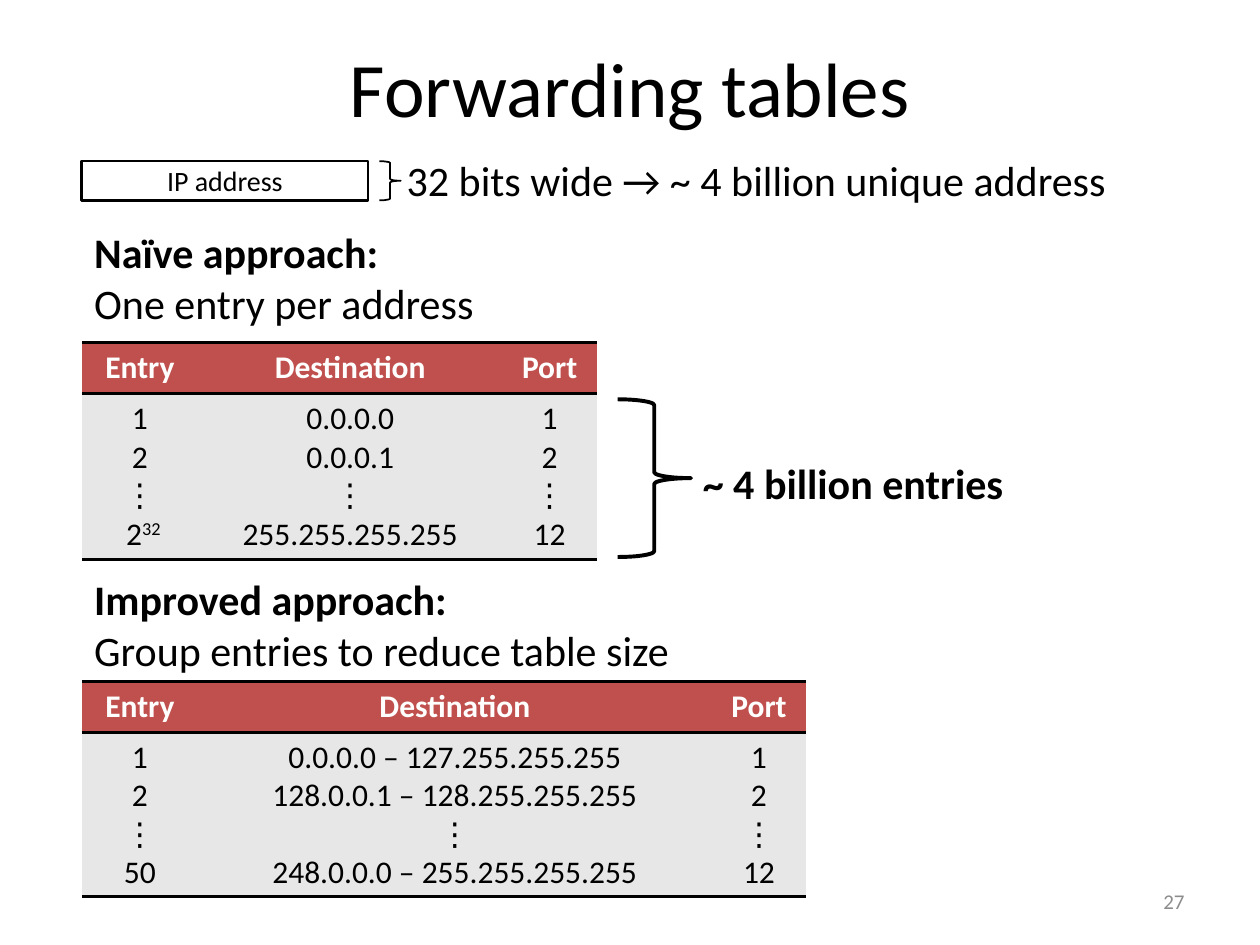
import pptx
import pptx.util
import pptx.dml.color
import pptx.enum.shapes
import pptx.enum.text
import pptx.oxml
import pptx.oxml.ns

Cm, Pt = pptx.util.Cm, pptx.util.Pt
Shape = pptx.enum.shapes.MSO_SHAPE
Align = pptx.enum.text.PP_ALIGN
Anchor = pptx.enum.text.MSO_ANCHOR
Fit = pptx.enum.text.MSO_AUTO_SIZE

BLACK, WHITE, RED = "000000", "FFFFFF", "C0504D"
PALE, GREY = "E7E7E7", "8C8C8C"
LEFT = 1.65
HEADS = ["Entry", "Destination", "Port"]


def tint(code):
    return pptx.dml.color.RGBColor.from_string(code)


def apply(item, values):
    for name, value in values.items():
        setattr(item, name, value)


class Deck:
    font = "Calibri"

    def __init__(self):
        self.file = pptx.Presentation()
        apply(self.file, {"slide_width": Cm(25.4), "slide_height": Cm(19.05)})
        self.slide = self.file.slides.add_slide(self.file.slide_layouts[5])

    def place(self, item, box):
        names = ("left", "top", "width", "height")
        apply(item, dict(zip(names, map(Cm, box))))

    def fill(self, frame, lines, size, bold=(), color=BLACK, align=Align.LEFT):
        for row, line in enumerate(lines):
            para = frame.paragraphs[0] if row == 0 else frame.add_paragraph()
            para.alignment = align
            for part, words in enumerate(line.split("^")):
                run = para.add_run()
                run.text = words
                apply(run.font, {"name": self.font, "size": Pt(size), "bold": row in bold})
                run.font.color.rgb = tint(color)
                if part:
                    run._r.get_or_add_rPr().set("baseline", "30000")

    def title(self, words, box):
        item = self.slide.shapes.title
        self.place(item, box)
        item.text_frame.vertical_anchor = Anchor.MIDDLE
        self.fill(item.text_frame, [words], 44, align=Align.CENTER)

    def text(self, lines, box, size=24, wrap=False, fit=Fit.SHAPE_TO_FIT_TEXT,
             anchor=Anchor.TOP, **style):
        frame = self.slide.shapes.add_textbox(*map(Cm, box)).text_frame
        apply(frame, {"word_wrap": wrap, "auto_size": fit, "vertical_anchor": anchor})
        self.fill(frame, lines, size, **style)

    def shape(self, kind, box, width):
        item = self.slide.shapes.add_shape(kind, *map(Cm, box))
        item.shadow.inherit = False
        item.fill.background()
        item.line.color.rgb = tint(BLACK)
        item.line.width = Pt(width)
        return item

    def label(self, words, box):
        frame = self.shape(Shape.RECTANGLE, box, 1.5).text_frame
        apply(frame, {"margin_left": 0, "margin_right": 0, "vertical_anchor": Anchor.MIDDLE})
        self.fill(frame, [words], 16, align=Align.CENTER)

    def brace(self, box, width):
        self.shape(Shape.RIGHT_BRACE, box, width).adjustments[0] = 0.08

    def edge(self, cell):
        space = pptx.oxml.ns.nsdecls("a")
        none = "<a:noFill/>"
        solid = f'<a:solidFill><a:srgbClr val="{BLACK}"/></a:solidFill>'
        sides = {"lnL": none, "lnR": none, "lnT": solid, "lnB": solid}
        for spot, (side, paint) in enumerate(sides.items()):
            line = f'<a:{side} {space} w="{int(Pt(2))}">{paint}</a:{side}>'
            cell._tc.get_or_add_tcPr().insert(spot, pptx.oxml.parse_xml(line))

    def table(self, top, widths, body):
        highs = [1.02, 3.3]
        box = (LEFT, top, sum(widths), sum(highs))
        grid = self.slide.shapes.add_table(2, len(widths), *map(Cm, box)).table
        grid.horz_banding = False
        for row, high in zip(grid.rows, highs):
            row.height = Cm(high)
        for col, width in enumerate(widths):
            grid.columns[col].width = Cm(width)
            self.cell(grid.cell(0, col), [HEADS[col]], RED, bold=[0], color=WHITE)
            self.cell(grid.cell(1, col), body[col], PALE)

    def cell(self, cell, lines, back, **style):
        cell.fill.solid()
        cell.fill.fore_color.rgb = tint(back)
        self.edge(cell)
        self.fill(cell.text_frame, lines, 18, align=Align.CENTER, **style)


def main():
    deck = Deck()
    deck.title("Forwarding tables", (1.27, 0.15, 22.86, 3.18))
    ports = ["1", "2", "⋮", "12"]
    deck.table(6.9, [2.34, 6.14, 1.9], [
        ["1", "2", "⋮", " 2^32"],
        ["0.0.0.0", "0.0.0.1", "⋮", "255.255.255.255"],
        ports])
    deck.brace((12.45, 8.05, 1.48, 3.18), 2.25)
    deck.text(["~ 4 billion entries"], (13.92, 9.1, 6.63, 1.28), bold=[0])
    deck.text(["Naïve approach:", "One entry per address"],
              (LEFT, 4.45, 8.26, 2.31), bold=[0])
    deck.text(["Improved approach:", "Group entries to reduce table size"],
              (LEFT, 11.44, 12.3, 2.31), bold=[0])
    deck.table(13.74, [2.34, 10.36, 1.9], [
        ["1", "2", "⋮", "50"],
        ["0.0.0.0 – 127.255.255.255", "128.0.0.1 – 128.255.255.255", "⋮",
         "248.0.0.0 – 255.255.255.255"],
        ports])
    deck.label("IP address", (LEFT, 3.25, 5.77, 0.79))
    deck.brace((7.65, 3.25, 0.43, 0.79), 1)
    deck.text(["32 bits wide → ~ 4 billion unique address"],
              (7.95, 3, 16.38, 1.28), wrap=True)
    deck.text(["27"], (18.2, 17.66, 5.93, 1.01), size=12, wrap=True, fit=Fit.NONE,
              anchor=Anchor.MIDDLE, color=GREY, align=Align.RIGHT)
    deck.file.save("out.pptx")


if __name__ == "__main__":
    main()
